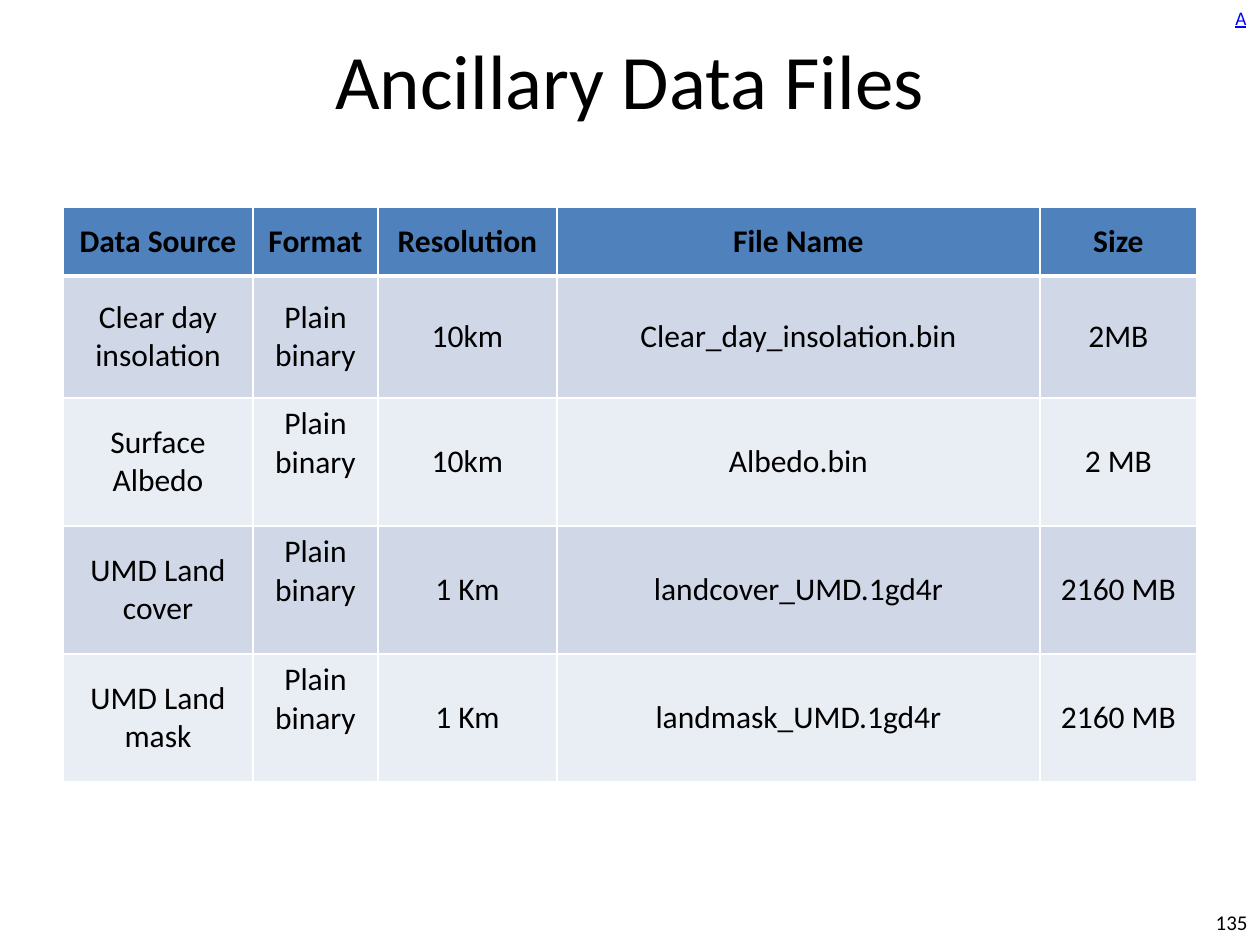
from pptx import Presentation, util as u
from pptx.dml.color import RGBColor
from pptx.enum import text as t
from pptx.oxml.ns import qn
from lxml import etree

SCALE = 914400 / 126
COLORS = {
    "ink": "000000",
    "link": "0000FF",
    "border": "FFFFFF",
    "header": "4F81BD",
    "odd": "D0D8E8",
    "even": "E9EDF4",
}
HEADINGS = ["Data Source", "Format", "Resolution", "File Name", "Size"]
SOURCES = [
    ["Clear day insolation", "Plain binary", "10km", "Clear_day_insolation.bin", "2MB"],
    ["Surface Albedo", "Plain binary", "10km", "Albedo.bin", "2 MB"],
    ["UMD Land cover", "Plain binary", "1 Km", "landcover_UMD.1gd4r", "2160 MB"],
    ["UMD Land mask", "Plain binary", "1 Km", "landmask_UMD.1gd4r", "2160 MB"],
]
COLUMN_WIDTHS = [190, 125, 179, 483, 157]
ROW_HEIGHTS = [69, 122, 128, 128, 128]
FORMAT_COLUMN = 1


def px(length):
    return u.Emu(round(length * SCALE))


def write(frame, words, size=18, color="ink", align=t.PP_ALIGN.CENTER,
          anchor=t.MSO_ANCHOR.MIDDLE, bold=False, underline=False):
    frame.vertical_anchor = anchor
    para = frame.paragraphs[0]
    para.alignment = align
    span = para.add_run()
    span.text = words
    span.font.name = "Calibri"
    span.font.size = u.Pt(size)
    span.font.bold = bold
    span.font.underline = underline
    span.font.color.rgb = RGBColor.from_string(COLORS[color])


class SlideBuilder:
    def __init__(self, deck):
        self.page = deck.slides.add_slide(deck.slide_layouts[5])

    def title(self, words, left, top, width, height):
        box = self.page.shapes.title
        box.left, box.top, box.width, box.height = map(px, (left, top, width, height))
        write(box.text_frame, words, size=44)

    def label(self, words, left, top, width, height, wrap=True, **style):
        box = self.page.shapes.add_textbox(*map(px, (left, top, width, height)))
        box.text_frame.word_wrap = wrap
        write(box.text_frame, words, **style)

    def border(self, cell, side, points):
        line = etree.SubElement(cell._tc.get_or_add_tcPr(), qn(f"a:ln{side}"), w=str(u.Pt(points)))
        fill = etree.SubElement(line, qn("a:solidFill"))
        etree.SubElement(fill, qn("a:srgbClr"), val=COLORS["border"])

    def cell(self, cell, words, fill, top=1, bottom=1, bold=False):
        for side, points in (("L", 1), ("R", 1), ("T", top), ("B", bottom)):
            self.border(cell, side, points)
        cell.fill.solid()
        cell.fill.fore_color.rgb = RGBColor.from_string(COLORS[fill])
        write(cell.text_frame, words, bold=bold)
        cell.vertical_anchor = t.MSO_ANCHOR.MIDDLE

    def table(self, left, top, widths, heights, rows):
        table = self.page.shapes.add_table(
            len(rows), len(widths), *map(px, (left, top, sum(widths), sum(heights)))).table
        for column, width in zip(table.columns, widths):
            column.width = px(width)
        for r, (words, height) in enumerate(zip(rows, heights)):
            table.rows[r].height = px(height)
            fill = "header" if r == 0 else "odd" if r % 2 else "even"
            for c, word in enumerate(words):
                self.cell(table.cell(r, c), word, fill, top=3 if r == 1 else 1,
                          bottom=3 if r == 0 else 1, bold=r == 0)
        return table


def main():
    deck = Presentation()
    deck.slide_width, deck.slide_height = px(1260), px(945)
    slide = SlideBuilder(deck)
    slide.label("135", 1166, 897, 94, 50, size=12, align=t.PP_ALIGN.RIGHT)
    slide.label("A", 1223, 0, 37, 37, wrap=False, size=11, color="link",
                align=t.PP_ALIGN.LEFT, anchor=t.MSO_ANCHOR.TOP, underline=True)
    slide.title("Ancillary Data Files", 63, 0, 1134, 158)
    table = slide.table(63, 207, COLUMN_WIDTHS, ROW_HEIGHTS, [HEADINGS, *SOURCES])
    for r in range(2, len(ROW_HEIGHTS)):
        table.cell(r, FORMAT_COLUMN).margin_bottom = px(44)
    deck.save("out.pptx")


if __name__ == "__main__":
    main()
